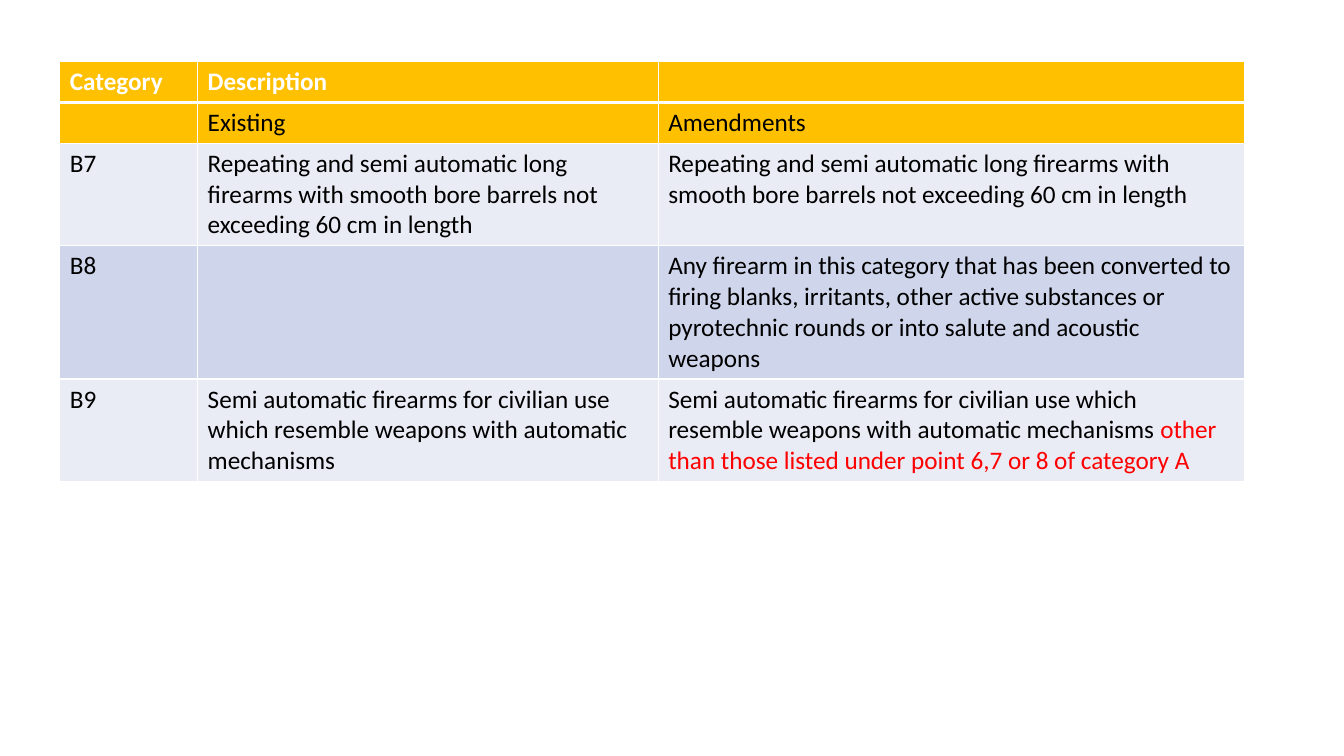
from lxml import etree
from pptx import Presentation
from pptx.dml.color import RGBColor
from pptx.oxml.ns import qn
from pptx.util import Pt

BLANK_LAYOUT = 6
COLORS = {
    "white": "FFFFFF",
    "black": "000000",
    "red": "FF0000",
    "gold": "FFC000",
    "light": "E9EBF5",
    "blue": "CFD5EA",
}


class SlideBuilder:
    """Holds the text style and the current page."""

    def __init__(self, page, font="Calibri", size=18):
        self.page = page
        self.font = font
        self.size = size

    def table(self, left, top, widths, heights):
        frame = self.page.shapes.add_table(
            len(heights), len(widths), Pt(left), Pt(top),
            Pt(sum(widths)), Pt(sum(heights)))
        table = frame.table
        for column, width in zip(table.columns, widths):
            column.width = Pt(width)
        for row, height in zip(table.rows, heights):
            row.height = Pt(height)
        return table

    def borders(self, cell, top, bottom):
        properties = cell._tc.get_or_add_tcPr()
        for side, width in (("L", 1), ("R", 1), ("T", top), ("B", bottom)):
            line = etree.SubElement(properties, qn(f"a:ln{side}"), w=str(Pt(width)))
            solid = etree.SubElement(line, qn("a:solidFill"))
            etree.SubElement(solid, qn("a:srgbClr"), val=COLORS["white"])

    def cell(self, cell, spans, fill, bold=False, top=1, bottom=1):
        self.borders(cell, top, bottom)
        cell.fill.solid()
        cell.fill.fore_color.rgb = RGBColor.from_string(COLORS[fill])
        para = cell.text_frame.paragraphs[0]
        para.font.size = Pt(self.size)
        for text, color in spans:
            span = para.add_run()
            span.text = text
            span.font.name = self.font
            span.font.size = Pt(self.size)
            span.font.bold = bold
            span.font.color.rgb = RGBColor.from_string(COLORS[color])


SMOOTH_BORE = ("Repeating and semi automatic long firearms with smooth bore "
               "barrels not exceeding 60 cm in length")
CONVERTED = ("Any firearm in this category that has been converted to firing "
             "blanks, irritants, other active substances or pyrotechnic rounds "
             "or into salute and acoustic weapons")
CIVILIAN = ("Semi automatic firearms for civilian use which resemble weapons "
            "with automatic mechanisms")
EXCEPTION = "other than those listed under point 6,7 or 8 of category A"

# Each row: fill, height, then the text of its three cells
ROWS = [
    ("gold", 29.2, ["Category", "Description", ""]),
    ("gold", 29.2, ["", "Existing", "Amendments"]),
    ("light", 73.2, ["B7", SMOOTH_BORE, SMOOTH_BORE]),
    ("blue", 95, ["B8", "", CONVERTED]),
    ("light", 73.2, ["B9", CIVILIAN, CIVILIAN + " "]),
]


def main():
    deck = Presentation()
    deck.slide_width, deck.slide_height = Pt(960), Pt(540)
    page = deck.slides.add_slide(deck.slide_layouts[BLANK_LAYOUT])
    builder = SlideBuilder(page)

    # Category table
    table = builder.table(42.7, 44, [98.5, 329, 419.2], [row[1] for row in ROWS])
    for r, (fill, _, texts) in enumerate(ROWS):
        header = r == 0
        for c, text in enumerate(texts):
            spans = [(text, "white" if header else "black")] if text else []
            # The amendment to the last category is marked in red
            if r == len(ROWS) - 1 and c == len(texts) - 1:
                spans.append((EXCEPTION, "red"))
            builder.cell(table.cell(r, c), spans, fill, bold=header,
                         top=3 if r == 1 else 1, bottom=3 if header else 1)

    deck.save("out.pptx")


if __name__ == "__main__":
    main()
